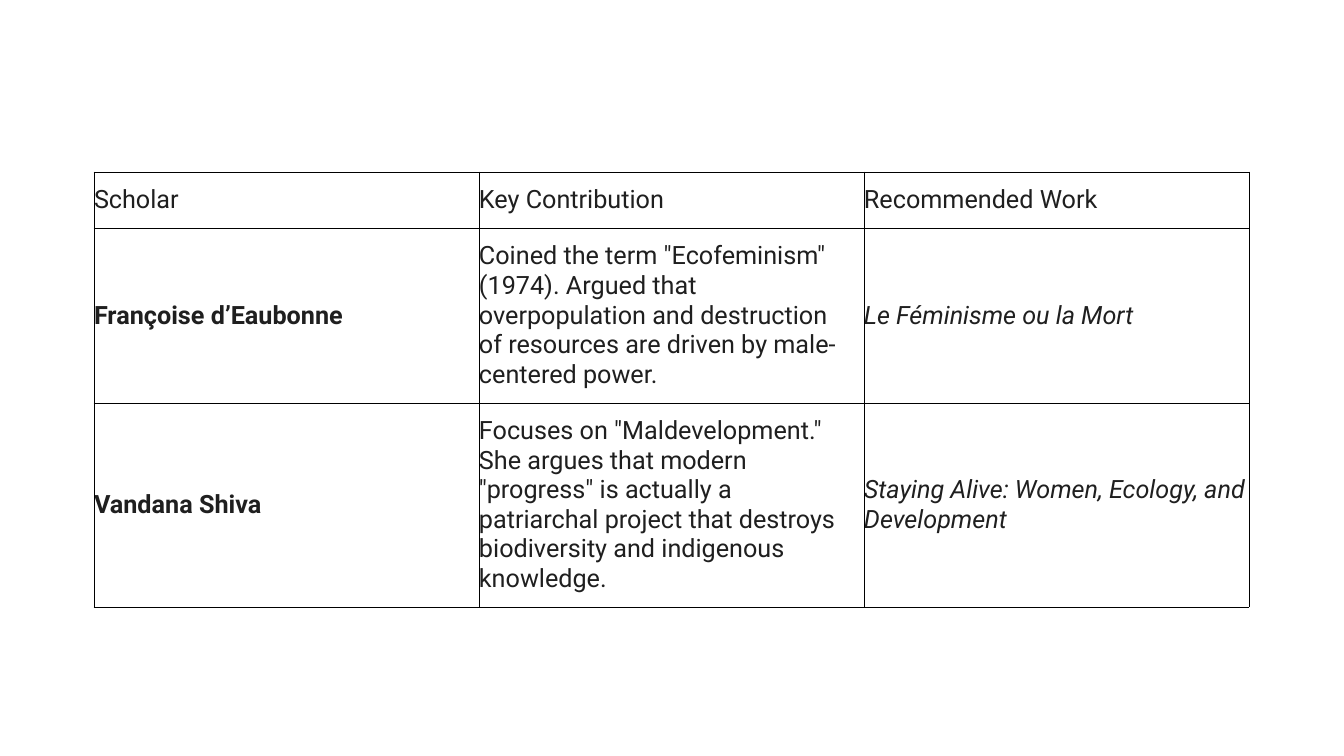
"""Build a slide with a table of ecofeminist scholars and their works."""
from dataclasses import dataclass

from lxml import etree
from pptx import Presentation
from pptx import util as u
from pptx.dml.color import RGBColor
from pptx.enum import text
from pptx.oxml.ns import qn
from pptx.table import _Cell

PX_PER_INCH = 100.8
COLOURS = {"ink": "1F1F1F", "border": "000000"}
FONT = "Roboto"
TABLE_LEFT, TABLE_TOP = 94, 172
COLUMN_WIDTH = 385
ROW_HEIGHTS = (56, 175, 204)
PAD_VERTICAL, PAD_RIGHT = 13, 10


@dataclass(frozen=True)
class Scholar:
    name: str
    contribution: str
    work: str


HEADINGS = ("Scholar", "Key Contribution", "Recommended Work")
SCHOLARS = (
    Scholar(
        "Françoise d’Eaubonne",
        'Coined the term "Ecofeminism" (1974). Argued that overpopulation and '
        "destruction of resources are driven by male-centered power.",
        "Le Féminisme ou la Mort",
    ),
    Scholar(
        "Vandana Shiva",
        'Focuses on "Maldevelopment." She argues that modern "progress" is actually '
        "a patriarchal project that destroys biodiversity and indigenous knowledge.",
        "Staying Alive: Women, Ecology, and Development",
    ),
)


def px(length: int) -> u.Emu:
    return u.Emu(round(length * u.Inches(1) / PX_PER_INCH))


def write(cell: _Cell, words: str, *, bold: bool = False, italic: bool = False) -> None:
    span = cell.text_frame.paragraphs[0].add_run()
    span.text = words
    span.font.name = FONT
    span.font.size = u.Pt(18)
    span.font.bold = bold
    span.font.italic = italic
    span.font.color.rgb = RGBColor.from_string(COLOURS["ink"])


def draw_borders(cell: _Cell) -> None:
    properties = cell._tc.get_or_add_tcPr()
    for side in ("lnL", "lnR", "lnT", "lnB"):
        line = etree.SubElement(properties, qn(f"a:{side}"), w=str(u.Pt(0.6)))
        fill = etree.SubElement(line, qn("a:solidFill"))
        etree.SubElement(fill, qn("a:srgbClr"), val=COLOURS["border"])


def format_cell(cell: _Cell, *, pad_right: int) -> None:
    cell.margin_left = 0
    cell.margin_right = px(pad_right)
    cell.margin_top = cell.margin_bottom = px(PAD_VERTICAL)
    cell.vertical_anchor = text.MSO_ANCHOR.MIDDLE
    draw_borders(cell)
    cell.fill.background()


def main() -> None:
    deck = Presentation()
    deck.slide_width, deck.slide_height = px(1344), px(756)
    page = deck.slides.add_slide(deck.slide_layouts[6])
    columns = len(HEADINGS)
    table = page.shapes.add_table(
        len(ROW_HEIGHTS), columns, px(TABLE_LEFT), px(TABLE_TOP),
        px(COLUMN_WIDTH * columns), px(sum(ROW_HEIGHTS)),
    ).table
    table.first_row = table.horz_banding = False

    for column in table.columns:
        column.width = px(COLUMN_WIDTH)
    for row, height in zip(table.rows, ROW_HEIGHTS):
        row.height = px(height)
        for index, cell in enumerate(row.cells):
            format_cell(cell, pad_right=PAD_RIGHT if index < columns - 1 else 0)

    for index, heading in enumerate(HEADINGS):
        write(table.cell(0, index), heading)
    for index, scholar in enumerate(SCHOLARS, start=1):
        write(table.cell(index, 0), scholar.name, bold=True)
        write(table.cell(index, 1), scholar.contribution)
        write(table.cell(index, 2), scholar.work, italic=True)

    deck.save("out.pptx")


if __name__ == "__main__":
    main()
